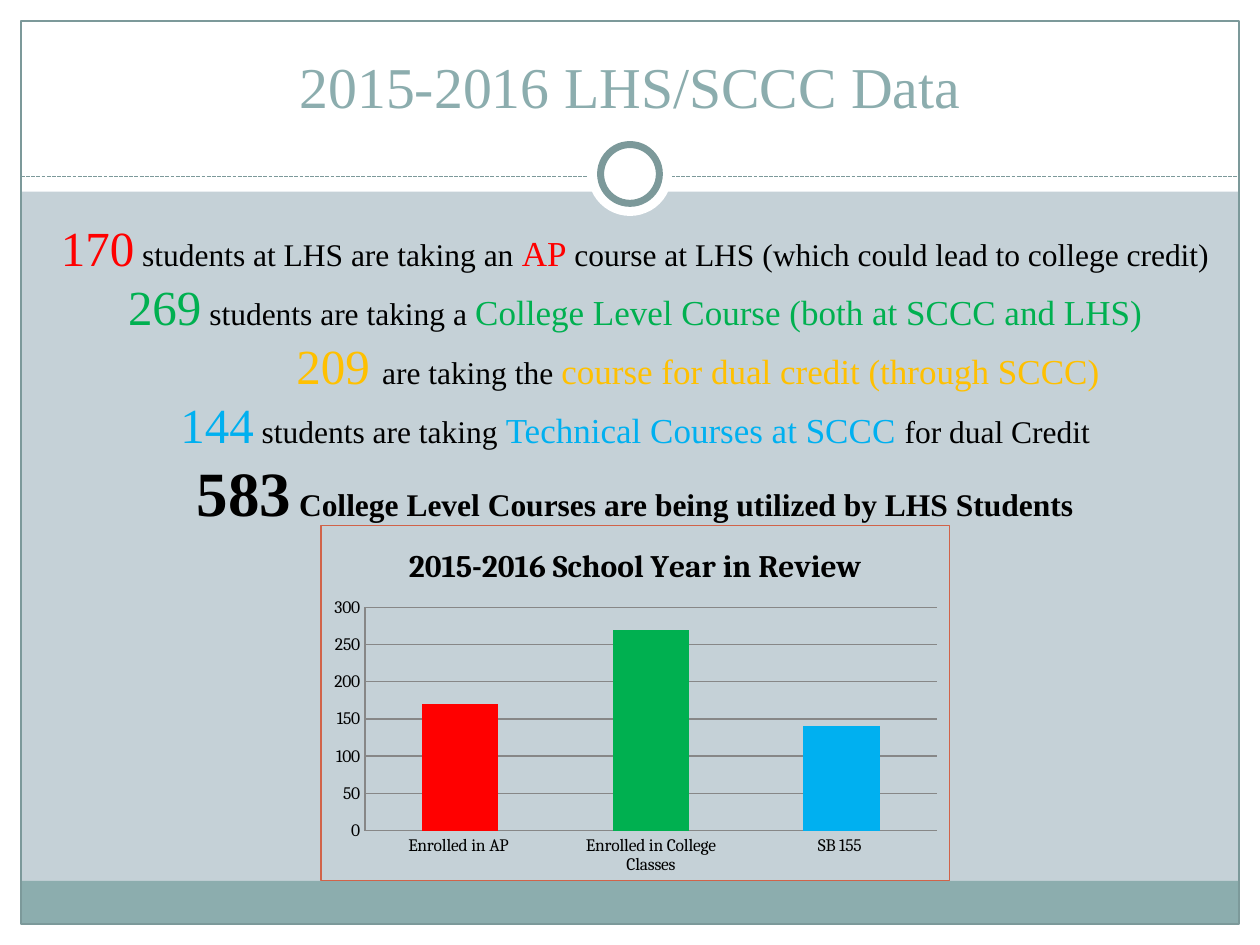
from dataclasses import dataclass
from typing import Optional

from lxml.etree import SubElement
from pptx import Presentation
from pptx.chart.data import CategoryChartData
from pptx.dml.color import RGBColor
from pptx.enum.chart import XL_CHART_TYPE, XL_TICK_MARK
from pptx.enum.dml import MSO_LINE
from pptx.enum.shapes import MSO_CONNECTOR, MSO_SHAPE
from pptx.enum.text import MSO_ANCHOR, PP_ALIGN
from pptx.oxml import parse_xml
from pptx.oxml.ns import nsdecls, qn
from pptx.util import Pt

WHITE = RGBColor(0xFF, 0xFF, 0xFF)
BLACK = RGBColor(0, 0, 0)
PALE = RGBColor(0xC5, 0xD1, 0xD7)
TEAL = RGBColor(0x8C, 0xAD, 0xAE)
DARK_TEAL = RGBColor(0x7C, 0x99, 0x9A)
GREY = RGBColor(0x87, 0x87, 0x87)
RUST = RGBColor(0xD1, 0x63, 0x49)
RED = RGBColor(0xFF, 0, 0)
GREEN = RGBColor(0, 0xB0, 0x50)
AMBER = RGBColor(0xFF, 0xC0, 0)
BLUE = RGBColor(0, 0xB0, 0xF0)
SERIF = "Times New Roman"
W, H, MARGIN = 720, 540, 12


@dataclass(frozen=True)
class Panel:
    """A frame shape, in points."""

    x: float
    y: float
    w: float
    h: float
    fill: Optional[RGBColor] = WHITE
    line: float = 0
    kind: MSO_SHAPE = MSO_SHAPE.RECTANGLE


@dataclass(frozen=True)
class Span:
    """A stretch of text in one format."""

    text: str
    size: float = 18
    color: RGBColor = BLACK
    bold: bool = False


@dataclass(frozen=True)
class Fact:
    """One centred line of spans with a left indent."""

    spans: tuple[Span, ...]
    indent: float = 0


PANELS = (
    Panel(0, H - MARGIN, W, MARGIN),
    Panel(0, 0, W, 109.5),
    Panel(0, 0, MARGIN, H),
    Panel(W - MARGIN, 0, MARGIN, H),
    Panel(MARGIN, 503.3, W - 2 * MARGIN, 24.7, TEAL),
    Panel(MARGIN, MARGIN, W - 2 * MARGIN, H - 2 * MARGIN, None, 0.75),
)
RING = (
    Panel(336, 75.4, 48, 48, kind=MSO_SHAPE.OVAL),
    Panel(343.2, 82.6, 33.6, 33.6, line=4, kind=MSO_SHAPE.OVAL),
)
FACTS = (
    Fact((Span("170", 28, RED), Span(" students at LHS are taking an "), Span("AP", 20, RED),
          Span(" course at LHS (which could lead to college credit)"))),
    Fact((Span("269", 28, GREEN), Span(" students are taking a "),
          Span("College Level Course (both at SCCC and LHS)", 20, GREEN))),
    Fact((Span("209 ", 28, AMBER), Span("are taking the "),
          Span("course for dual credit (through SCCC)", 20, AMBER)), indent=72),
    Fact((Span("144", 28, BLUE), Span(" students are taking "),
          Span("Technical Courses at SCCC ", 20, BLUE), Span("for dual Credit"))),
    Fact((Span("583", 36, bold=True),
          Span(" College Level Courses are being utilized by LHS Students", bold=True))),
)
ENROLLMENT = (
    ("Enrolled in AP ", 170, RED),
    ("Enrolled in College Classes", 269, GREEN),
    ("SB 155 ", 141, BLUE),
)
PLOT_AREA = {"x": 0.07, "y": 0.23, "w": 0.91, "h": 0.63}


def add_panel(s, panel: Panel) -> None:
    """Draw one frame shape."""
    sp = s.shapes.add_shape(panel.kind, Pt(panel.x), Pt(panel.y), Pt(panel.w), Pt(panel.h))
    sp.shadow.inherit = False
    if panel.fill is None:
        sp.fill.background()
    else:
        sp.fill.solid()
        sp.fill.fore_color.rgb = panel.fill
    if panel.line:
        sp.line.color.rgb = DARK_TEAL
        sp.line.width = Pt(panel.line)
    else:
        sp.line.fill.background()


def add_rule(s, y: float) -> None:
    """Draw the dashed line under the title."""
    sp = s.shapes.add_connector(MSO_CONNECTOR.STRAIGHT, Pt(MARGIN), Pt(y), Pt(W - MARGIN), Pt(y))
    sp.line.color.rgb = DARK_TEAL
    sp.line.width = Pt(0.75)
    sp.line.dash_style = MSO_LINE.SQUARE_DOT
    SubElement(sp.element.spPr, qn("a:effectLst"))


def add_run(p, text: str, *, size: float, color: RGBColor, bold: bool = False,
            font: str = SERIF) -> None:
    """Append formatted text to a paragraph."""
    r = p.add_run()
    r.text = text
    r.font.name, r.font.size, r.font.bold = font, Pt(size), bold
    r.font.color.rgb = color


def add_text(s, x: float, y: float, w: float, h: float, facts: tuple[Fact, ...],
             anchor: MSO_ANCHOR = MSO_ANCHOR.TOP) -> None:
    """Draw a text box of centred lines."""
    tf = s.shapes.add_textbox(Pt(x), Pt(y), Pt(w), Pt(h)).text_frame
    tf.word_wrap = True
    tf.vertical_anchor = anchor
    for i, fact in enumerate(facts):
        p = tf.add_paragraph() if i else tf.paragraphs[0]
        p.alignment = PP_ALIGN.CENTER
        if fact.indent:
            p._p.get_or_add_pPr().set("marL", str(Pt(fact.indent)))
        for span in fact.spans:
            add_run(p, span.text, size=span.size, color=span.color, bold=span.bold)


def frame_chart(chart) -> None:
    """Give the chart its border and fix its plot area."""
    border = parse_xml(
        f'<c:spPr {nsdecls("c", "a")}><a:noFill/><a:ln w="{Pt(0.75)}"><a:solidFill>'
        f'<a:srgbClr val="{RUST}"/></a:solidFill></a:ln></c:spPr>')
    chart.element.find(qn("c:txPr")).addprevious(border)
    area = chart.element.chart.plotArea
    for old in area.findall(qn("c:layout")):
        area.remove(old)
    sizes = "".join(f'<c:{key} val="{value}"/>' for key, value in PLOT_AREA.items())
    area.insert(0, parse_xml(
        f'<c:layout {nsdecls("c")}><c:manualLayout><c:layoutTarget val="inner"/>'
        f'<c:xMode val="edge"/><c:yMode val="edge"/>{sizes}</c:manualLayout></c:layout>'))


def add_enrollment_chart(s, x: float, y: float, w: float, h: float) -> None:
    """Draw the column chart with one colour per column."""
    data = CategoryChartData()
    data.categories = [name for name, _, _ in ENROLLMENT]
    data.add_series("Series 1", [value for _, value, _ in ENROLLMENT])
    chart = s.shapes.add_chart(XL_CHART_TYPE.COLUMN_CLUSTERED, Pt(x), Pt(y), Pt(w), Pt(h),
                               data).chart
    chart.font.name, chart.font.size = "Cambria", Pt(10)
    chart.font.color.rgb = BLACK
    chart.has_legend = False
    p = chart.chart_title.text_frame.paragraphs[0]
    add_run(p, "2015-2016 School Year in Review", size=18, color=BLACK, bold=True, font="Cambria")
    chart.chart_title.include_in_layout = False

    plot = chart.plots[0]
    plot.gap_width = 150
    plot.vary_by_categories = False
    for i, (_, _, color) in enumerate(ENROLLMENT):
        fill = plot.series[0].points[i].format.fill
        fill.solid()
        fill.fore_color.rgb = color

    axis = chart.value_axis
    axis.minimum_scale, axis.maximum_scale, axis.major_unit = 0, 300, 50
    for line in (axis.format.line, chart.category_axis.format.line,
                 axis.major_gridlines.format.line):
        line.color.rgb = GREY
        line.width = Pt(0.75)
    axis.major_tick_mark = chart.category_axis.major_tick_mark = XL_TICK_MARK.NONE
    frame_chart(chart)


def main() -> None:
    """Build the slide and save it."""
    prs = Presentation()
    prs.slide_width, prs.slide_height = Pt(W), Pt(H)
    s = prs.slides.add_slide(prs.slide_layouts[6])
    s.background.fill.solid()
    s.background.fill.fore_color.rgb = PALE
    for panel in PANELS:
        add_panel(s, panel)
    add_rule(s, 100.8)
    for panel in RING:
        add_panel(s, panel)
    title = Fact((Span("2015-2016 LHS/SCCC Data", 33, TEAL),))
    add_text(s, 36, 12, 648, 60, (title,), anchor=MSO_ANCHOR.BOTTOM)
    add_text(s, 24, 121, 678, 178, FACTS)
    add_enrollment_chart(s, 183, 300, 360, 203.5)
    prs.save("out.pptx")


if __name__ == "__main__":
    main()
